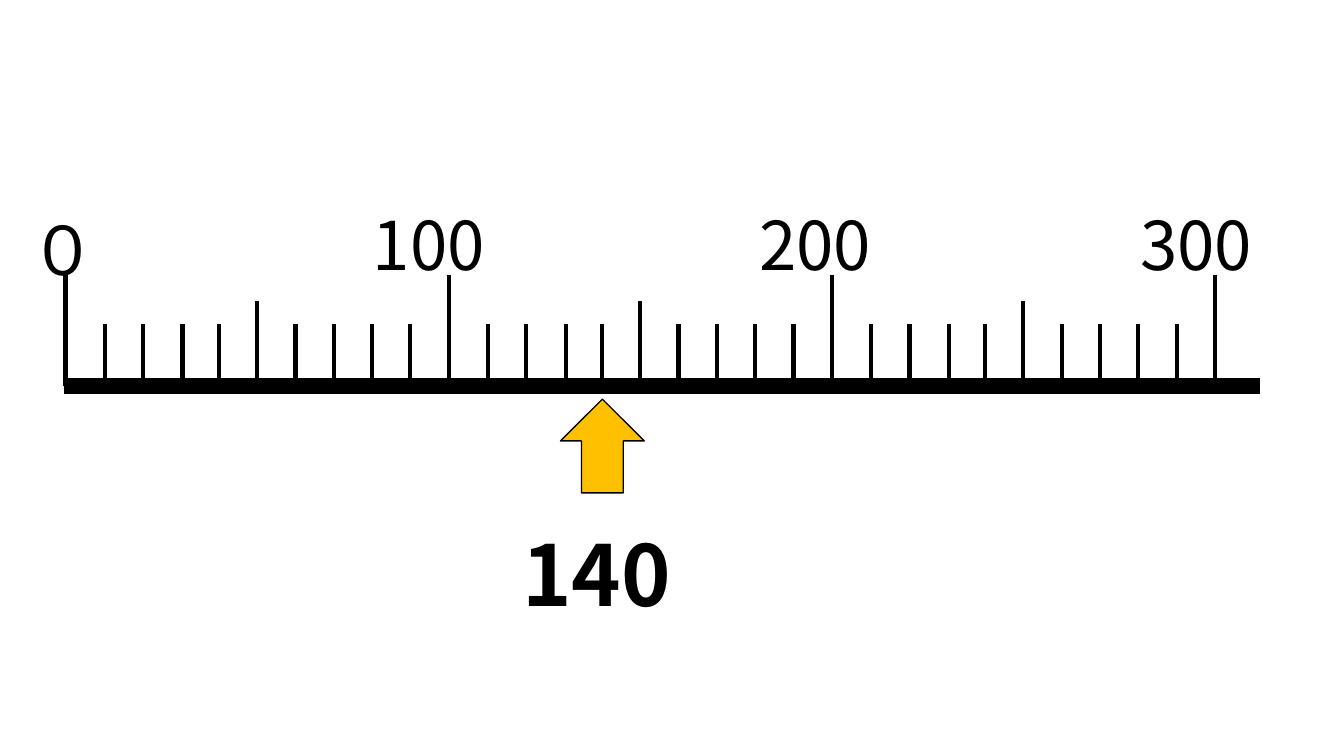
from lxml import etree
from pptx import Presentation
from pptx.dml.color import RGBColor
from pptx.enum import shapes, text
from pptx.oxml import ns
from pptx.util import Inches, Pt

COLORS = {"ink": "000000", "arrow": "FFC000"}
FONT = "Noto Sans CJK JP"
ZERO_X, HUNDRED, BASE_Y = 0.65, 3.8, 3.83
TICK_OFFSETS = [0, 0.39, 0.77, 1.16, 1.52, 1.9, 2.28, 2.66, 3.04, 3.42]
TICK_TOPS = {0: 2.73, 5: 2.99}
MINOR_TOP = 3.21


def color(name):
    return RGBColor.from_string(COLORS[name])


def add_label(s, label, left, top, width, height, size=48, bold=False, wrap=False):
    box = s.shapes.add_textbox(Inches(left), Inches(top), Inches(width), Inches(height))
    tf = box.text_frame
    tf.word_wrap = wrap
    tf.auto_size = text.MSO_AUTO_SIZE.SHAPE_TO_FIT_TEXT
    r = tf.paragraphs[0].add_run()
    r.text = label
    r.font.name = FONT
    r.font.size = Pt(size)
    r.font.bold = bold
    r.font.color.rgb = color("ink")
    ea = etree.SubElement(r.font._element, ns.qn("a:ea"))
    ea.set("typeface", FONT)


def add_line(group, x1, y1, x2, y2, width):
    line = group.shapes.add_connector(
        shapes.MSO_CONNECTOR.STRAIGHT, Inches(x1), Inches(y1), Inches(x2), Inches(y2))
    line.line.color.rgb = color("ink")
    line.line.width = Pt(width)
    etree.SubElement(line._element.spPr, ns.qn("a:effectLst"))


def add_scale(s):
    group = s.shapes.add_group_shape()
    add_line(group, 0.63, BASE_Y, 12.5, BASE_Y, 12)
    for i in range(31):
        hundreds, tens = divmod(i, 10)
        x = ZERO_X + hundreds * HUNDRED + TICK_OFFSETS[tens]
        add_line(group, x, BASE_Y, x, TICK_TOPS.get(tens, MINOR_TOP), 3)


def add_pointer(s, left, top, width, height):
    sp = s.shapes.add_shape(
        shapes.MSO_SHAPE.UP_ARROW, Inches(left), Inches(top), Inches(width), Inches(height))
    sp.shadow.inherit = False
    sp.fill.solid()
    sp.fill.fore_color.rgb = color("arrow")
    sp.line.color.rgb = color("ink")
    sp.line.width = Pt(1)


def main():
    prs = Presentation()
    prs.slide_width, prs.slide_height = Inches(13.33), Inches(7.5)
    s = prs.slides.add_slide(prs.slide_layouts[6])
    add_label(s, "０", 0.19, 2.02, 0.88, 0.91)
    for label, left in (("100", 3.6), ("200", 7.43), ("300", 11.21)):
        add_label(s, label, left, 1.97, 1.46, 0.91)
    add_pointer(s, 5.56, 3.96, 0.83, 0.93)
    add_scale(s)
    add_label(s, "140", 5.08, 5.13, 2.09, 1.11, size=60, bold=True, wrap=True)
    prs.save("out.pptx")


if __name__ == "__main__":
    main()
